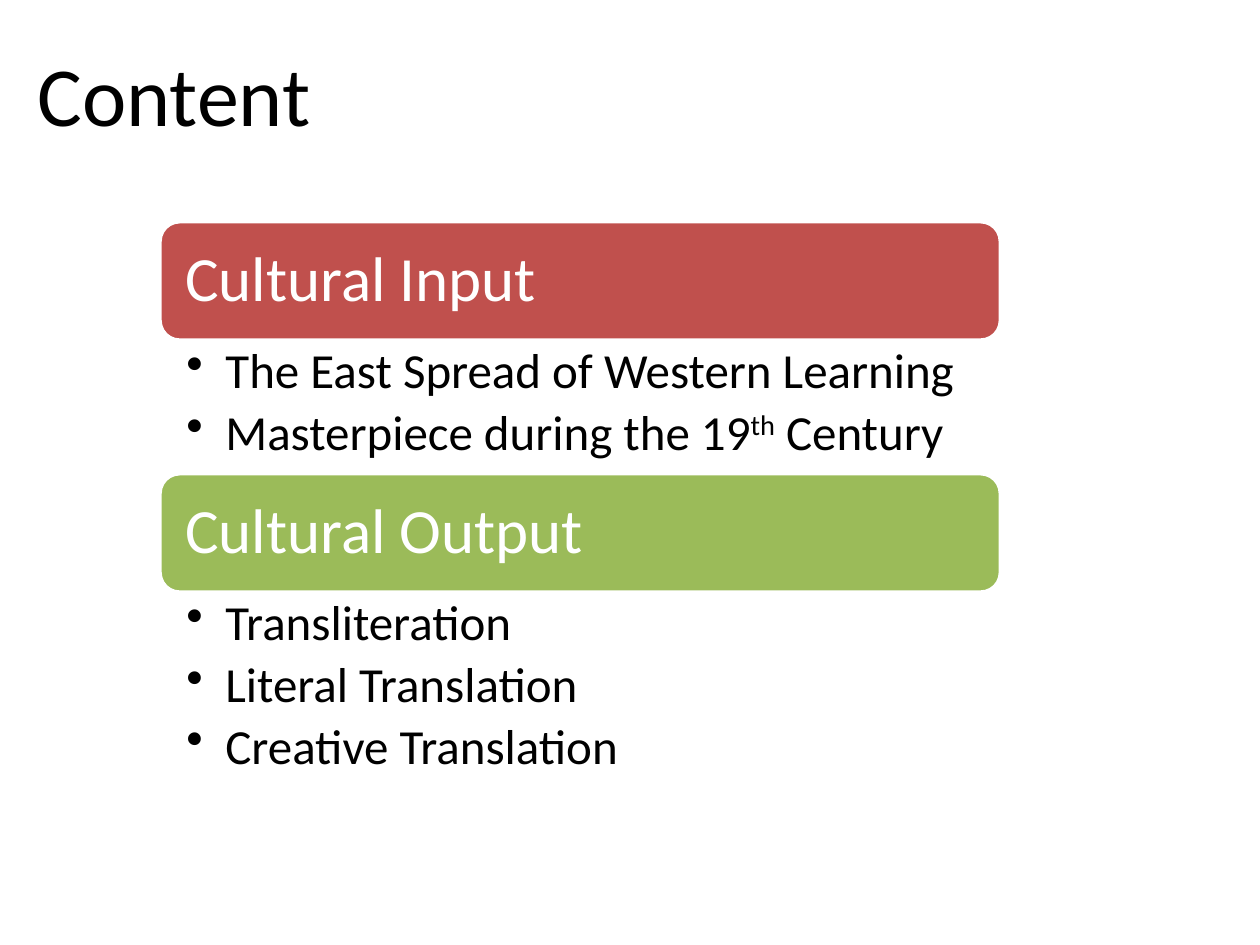
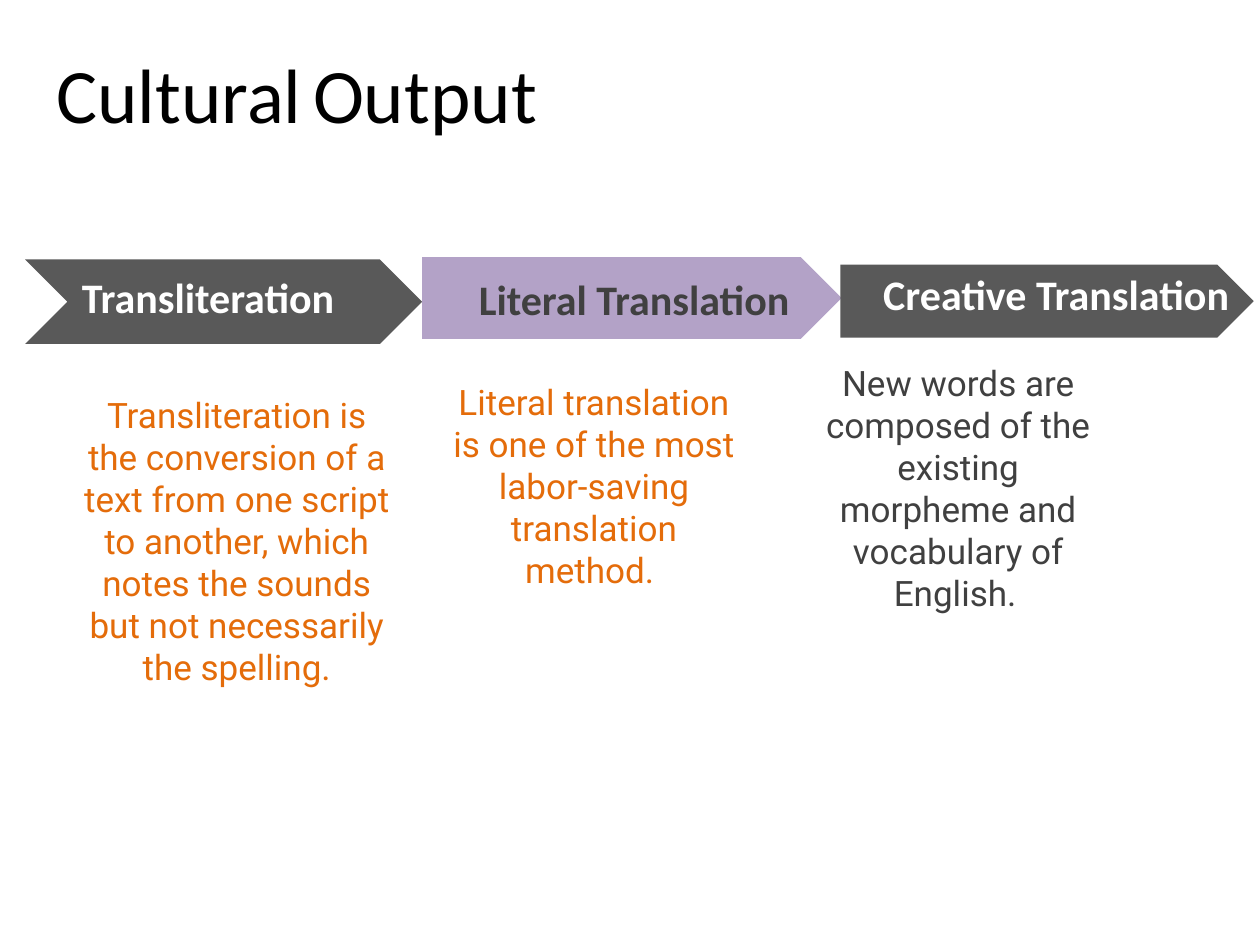
from lxml import etree
from pptx import Presentation
from pptx.dml.color import RGBColor
from pptx.enum import shapes, text
from pptx.oxml import ns
from pptx.util import Inches, Pt

BLACK = RGBColor(0x00, 0x00, 0x00)
WHITE = RGBColor(0xFF, 0xFF, 0xFF)
RED = RGBColor(0xC0, 0x50, 0x4D)
GREEN = RGBColor(0x9B, 0xBB, 0x59)
GRAY = RGBColor(0x59, 0x59, 0x59)
DARK = RGBColor(0x40, 0x40, 0x40)
LILAC = RGBColor(0xB3, 0xA2, 0xC7)
ORANGE = RGBColor(0xE4, 0x6C, 0x0A)

HEADING, BODY = "Calibri", "Roboto"
SHAPE = shapes.MSO_SHAPE

# Each paragraph is a list of runs: (text, format changes)
CONTENT_TITLE = ("Content", {"size": Pt(48)}), 
OUTPUT_TITLE = (("Cultural", {}), (" ", {"size": Pt(28)}), ("Output", {}))

# heading, band colour, height of the list below, bullets
SECTIONS = [
    ("Cultural Input", RED, 1.06, [
        [("The East Spread of Western Learning", {})],
        [("Masterpiece during the 19", {}), ("th", {"baseline": 30000}), (" Century", {})],
    ]),
    ("Cultural Output", GREEN, 1.59, [
        [("Transliteration", {})],
        [("Literal Translation", {})],
        [("Creative Translation", {})],
    ]),
]
BAND_LEFT, BAND_TOP, BAND_WIDTH, BAND_HEIGHT = 1.27, 1.76, 6.67, 0.94
BAND_PAD = 0.05

# arrow: shape, fill, box; label: text, colour, box; note: runs, colour, box
METHODS = [
    dict(arrow=(SHAPE.CHEVRON, GRAY, (0.2, 2.06, 3.15, 0.67)),
         label=("Transliteration", WHITE, (0.65, 2.2, 2.25, 0.36)),
         note=([("Transliteration is the conversion of a text from one script to another, "
                 "which notes the sounds but not necessarily the spelling.", {})],
               ORANGE, (0.65, 3.12, 2.46, 2.36))),
    dict(arrow=(SHAPE.PENTAGON, LILAC, (3.35, 2.04, 3.33, 0.65)),
         label=("Literal Translation", DARK, (3.8, 2.22, 2.62, 0.36)),
         note=([("Literal translation is one of the most labor-saving translation method. ", {})],
               ORANGE, (3.58, 3.02, 2.27, 1.68))),
    dict(arrow=(SHAPE.PENTAGON, GRAY, (6.67, 2.1, 3.28, 0.58)),
         label=("Creative Translation", WHITE, (7.01, 2.18, 2.94, 0.36)),
         note=([("New words are composed of the existing morpheme and vocabulary of English.", {}),
                (" ", {"size": Pt(14)})],
               DARK, (6.47, 2.87, 2.27, 2.02))),
]


def add_bullet(p, indent=0.31):
    pPr = p._p.get_or_add_pPr()
    pPr.set("marL", str(Inches(indent)))
    pPr.set("indent", str(-Inches(indent)))
    etree.SubElement(pPr, ns.qn("a:buChar")).set("char", "•")


def add_text(slide, box, paragraphs, font, insets=(0, 0, 0, 0),
             anchor=text.MSO_ANCHOR.TOP, bullets=False, **layout):
    """Text box; insets run left, top, right, bottom; layout holds paragraph attributes."""
    tf = slide.shapes.add_textbox(*map(Inches, box)).text_frame
    tf.word_wrap = True
    tf.vertical_anchor = anchor
    for side, inset in zip(("left", "top", "right", "bottom"), insets):
        setattr(tf, f"margin_{side}", Inches(inset))
    for i, runs in enumerate(paragraphs):
        p = tf.add_paragraph() if i else tf.paragraphs[0]
        for name, value in layout.items():
            setattr(p, name, value)
        if bullets:
            add_bullet(p)
        for words, changes in runs:
            r = p.add_run()
            r.text = words
            for name, value in {**font, **changes}.items():
                if name == "color":
                    r.font.color.rgb = value
                elif name == "baseline":
                    r._r.get_or_add_rPr().set("baseline", str(value))
                else:
                    setattr(r.font, name, value)


def add_block(slide, kind, box, fill, line=None):
    sp = slide.shapes.add_shape(kind, *map(Inches, box))
    sp.shadow.inherit = False
    sp.fill.solid()
    sp.fill.fore_color.rgb = fill
    if line is None:
        sp.line.fill.background()
    else:
        sp.line.color.rgb = line
        sp.line.width = Pt(2)


def add_slide(prs, title, box):
    slide = prs.slides.add_slide(prs.slide_layouts[6])
    add_text(slide, box, [title], dict(name=HEADING, size=Pt(44), color=BLACK),
             insets=(0.1, 0.05, 0.1, 0.05))
    return slide


def build_content(prs):
    slide = add_slide(prs, CONTENT_TITLE, (0.2, 0.29, 4.41, 0.91))
    top = BAND_TOP
    for heading, color, list_height, bullets in SECTIONS:
        add_block(slide, SHAPE.ROUNDED_RECTANGLE,
                  (BAND_LEFT, top, BAND_WIDTH, BAND_HEIGHT), color, WHITE)
        add_text(slide, (BAND_LEFT + BAND_PAD, top + BAND_PAD,
                         BAND_WIDTH - 2 * BAND_PAD, BAND_HEIGHT - 2 * BAND_PAD),
                 [[(heading, {})]], dict(name=HEADING, size=Pt(36), color=WHITE),
                 insets=(0.15,) * 4, anchor=text.MSO_ANCHOR.MIDDLE, line_spacing=0.9)
        top += BAND_HEIGHT
        add_text(slide, (BAND_LEFT, top, BAND_WIDTH, list_height), bullets,
                 dict(name=HEADING, size=Pt(28), color=BLACK),
                 insets=(0.21, 0.05, 0.28, 0.05), bullets=True,
                 line_spacing=0.9, space_after=Pt(5))
        top += list_height


def build_output(prs):
    slide = add_slide(prs, OUTPUT_TITLE, (0.35, 0.32, 4.65, 0.84))
    for method in METHODS:
        kind, fill, box = method["arrow"]
        add_block(slide, kind, box, fill)
        label, color, box = method["label"]
        add_text(slide, box, [[(label, {})]],
                 dict(name=HEADING, size=Pt(24), bold=True, color=color), line_spacing=0.9)
        runs, color, box = method["note"]
        add_text(slide, box, [runs], dict(name=BODY, size=Pt(20), color=color),
                 alignment=text.PP_ALIGN.CENTER)


def main():
    prs = Presentation()
    prs.slide_width, prs.slide_height = Inches(10), Inches(7.5)
    build_content(prs)
    build_output(prs)
    prs.save("out.pptx")


if __name__ == "__main__":
    main()
